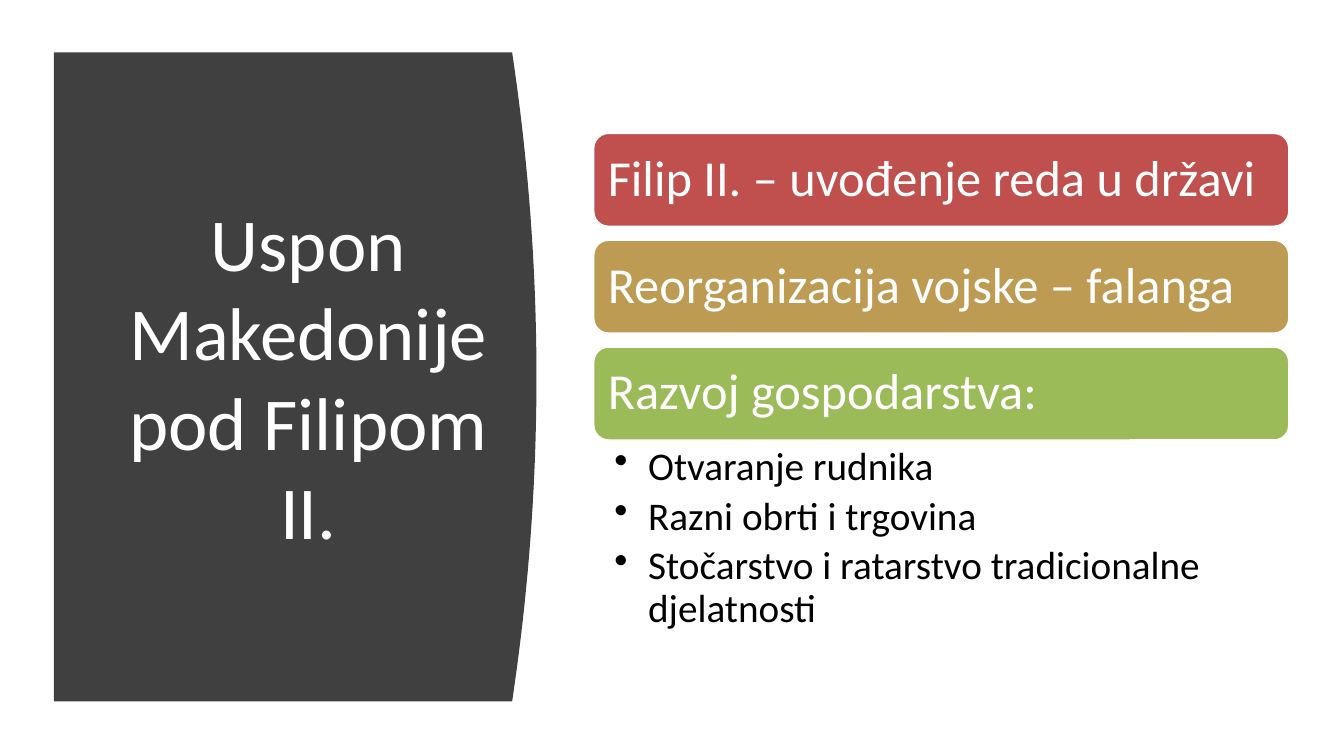
from dataclasses import dataclass

from lxml.etree import SubElement
from pptx import Presentation
from pptx.dml.color import RGBColor
from pptx.enum.shapes import MSO_SHAPE
from pptx.enum.text import MSO_ANCHOR, MSO_AUTO_SIZE, PP_ALIGN
from pptx.oxml.ns import qn
from pptx.util import Cm, Pt


@dataclass(frozen=True)
class Theme:
    font: str = "Calibri"
    white: str = "FFFFFF"
    black: str = "000000"
    panel: str = "404040"
    bars: tuple = ("C0504D", "BD9B53", "9BBB59")
    title_size: int = 40
    bar_size: int = 27
    bullet_size: int = 21


class SlideBuilder:
    """Draws styled elements on one slide."""

    def __init__(self, slide, theme):
        self.slide = slide
        self.theme = theme

    def format_text(self, paragraph, size, color, alignment=PP_ALIGN.LEFT):
        paragraph.alignment = alignment
        for run in paragraph.runs:
            run.font.name = self.theme.font
            run.font.size = Pt(size)
            run.font.color.rgb = RGBColor.from_string(color)

    def set_margins(self, text_frame, left, top, right, bottom):
        text_frame.margin_left, text_frame.margin_top = Cm(left), Cm(top)
        text_frame.margin_right, text_frame.margin_bottom = Cm(right), Cm(bottom)

    def fill(self, shape, color):
        shape.shadow.inherit = False
        shape.fill.solid()
        shape.fill.fore_color.rgb = RGBColor.from_string(color)

    def curved_panel(self, left, top, width, height, bulge, steps=40):
        builder = self.slide.shapes.build_freeform(Cm(left), Cm(top))
        fractions = [step / steps for step in range(steps + 1)]
        edge = [
            (Cm(left + width + 4 * bulge * part * (1 - part)), Cm(top + height * part))
            for part in fractions
        ]
        builder.add_line_segments(edge + [(Cm(left), Cm(top + height))], close=True)
        panel = builder.convert_to_shape()
        self.fill(panel, self.theme.panel)
        panel.line.fill.background()

    def title(self, text, left, top, width, height):
        title = self.slide.shapes.title
        title.left, title.top = Cm(left), Cm(top)
        title.width, title.height = Cm(width), Cm(height)
        text_frame = title.text_frame
        text_frame.text = text
        text_frame.word_wrap = True
        text_frame.auto_size = MSO_AUTO_SIZE.NONE
        text_frame.vertical_anchor = MSO_ANCHOR.MIDDLE
        self.format_text(
            text_frame.paragraphs[0], self.theme.title_size, self.theme.white, PP_ALIGN.CENTER
        )
        tree = title.element.getparent()
        tree.append(title.element)

    def bar(self, text, color, left, top, width, height):
        bar = self.slide.shapes.add_shape(
            MSO_SHAPE.ROUNDED_RECTANGLE, Cm(left), Cm(top), Cm(width), Cm(height)
        )
        self.fill(bar, color)
        bar.line.color.rgb = RGBColor.from_string(self.theme.white)
        bar.line.width = Pt(2)
        text_frame = bar.text_frame
        text_frame.text = text
        text_frame.word_wrap = True
        text_frame.vertical_anchor = MSO_ANCHOR.MIDDLE
        self.set_margins(text_frame, 0.2, 0.2, 0.2, 0.2)
        paragraph = text_frame.paragraphs[0]
        paragraph.line_spacing = 0.9
        self.format_text(paragraph, self.theme.bar_size, self.theme.white)

    def bullets(self, items, left, top, width, height):
        box = self.slide.shapes.add_textbox(Cm(left), Cm(top), Cm(width), Cm(height))
        text_frame = box.text_frame
        text_frame.text = "\n".join(items)
        text_frame.word_wrap = True
        self.set_margins(text_frame, 0.41, 0.1, 0.53, 0.1)
        for paragraph in text_frame.paragraphs:
            properties = paragraph._p.get_or_add_pPr()
            properties.set("marL", str(Cm(0.64)))
            properties.set("indent", str(-Cm(0.64)))
            SubElement(properties, qn("a:buChar")).set("char", "•")
            paragraph.line_spacing = 0.9
            paragraph.space_after = Pt(4)
            self.format_text(paragraph, self.theme.bullet_size, self.theme.black)


def main():
    presentation = Presentation()
    presentation.slide_width, presentation.slide_height = Cm(25.4), Cm(14.29)
    theme = Theme()
    builder = SlideBuilder(
        presentation.slides.add_slide(presentation.slide_layouts[5]), theme
    )

    builder.curved_panel(1.02, 0.99, 8.66, 12.27, bulge=0.46)
    builder.title("Uspon Makedonije pod Filipom II.", 1.8, 2.11, 8.05, 9.98)

    left, top, width, height, pitch = 11.2, 2.5, 13.18, 1.8, 2.02
    headings = (
        "Filip II. – uvođenje reda u državi",
        "Reorganizacija vojske – falanga",
        "Razvoj gospodarstva:",
    )
    for row, (heading, color) in enumerate(zip(headings, theme.bars)):
        builder.bar(heading, color, left, top + row * pitch, width, height)

    activities = (
        "Otvaranje rudnika",
        "Razni obrti i trgovina",
        "Stočarstvo i ratarstvo tradicionalne djelatnosti",
    )
    builder.bullets(activities, left, top + 2 * pitch + height, width, 3.89)
    presentation.save("out.pptx")


if __name__ == "__main__":
    main()
